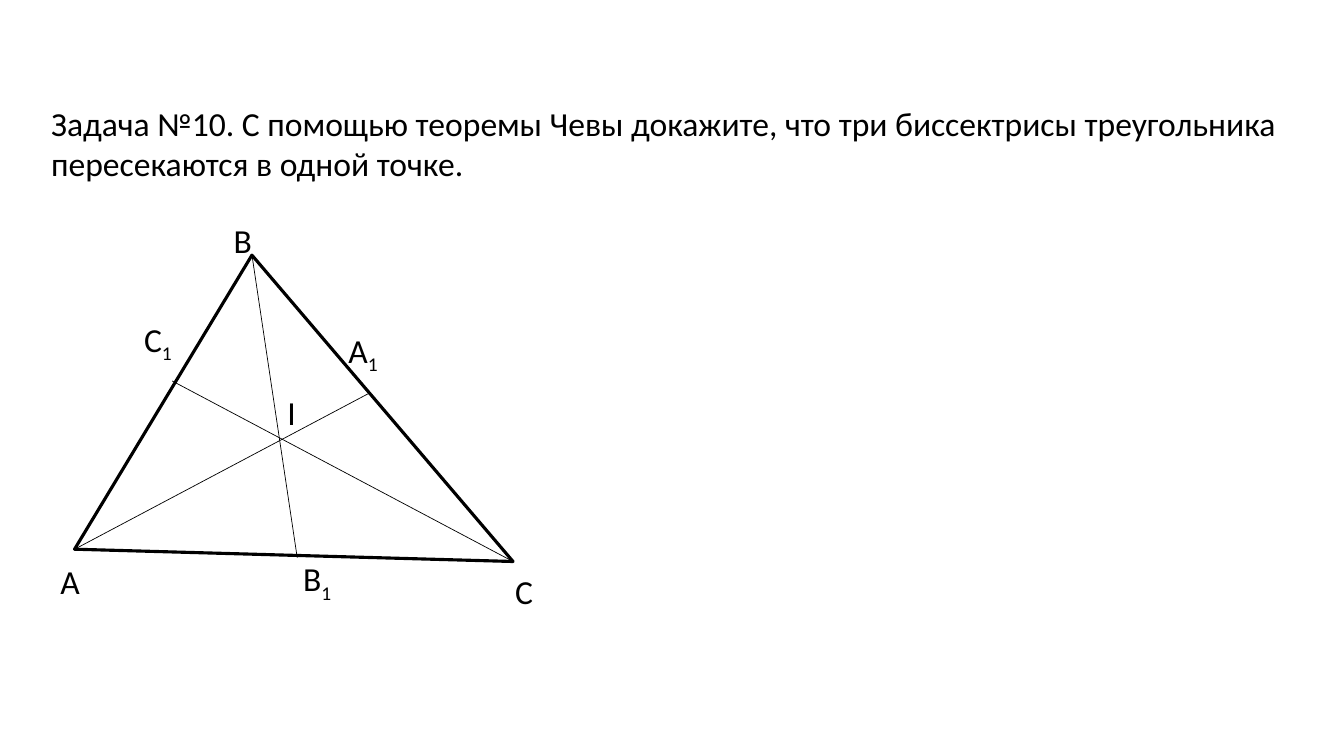
from pptx import Presentation
from pptx.dml.color import RGBColor
from pptx.enum.shapes import MSO_CONNECTOR as Connector
from pptx.enum.text import MSO_AUTO_SIZE as AutoSize
from pptx.oxml.ns import qn
from pptx.util import Cm, Pt
from lxml.etree import SubElement

BLACK = RGBColor(0, 0, 0)

VERTICES = {"А": (1.88, 13.84), "В": (6.35, 6.43), "С": (12.93, 14.15)}
BISECTORS = {"А": (9.3, 9.91), "В": (7.49, 14.05), "С": (4.34, 9.6)}
LABELS = [
    ("А", "", 1.27, 14.02, 1.02),
    ("В", "", 5.64, 5.41, 1.02),
    ("С", "", 12.73, 14.25, 1.02),
    ("C", "1", 3.38, 7.9, 1.65),
    ("A", "1", 8.53, 8.18, 1.45),
    ("B", "1", 7.39, 13.94, 1.63),
    ("I", "", 6.99, 9.75, 1.02),
]
PROBLEM = ("Задача №10. С помощью теоремы Чевы докажите, что три биссектрисы "
           "треугольника пересекаются в одной точке.")


class Sketch:
    text_format = {"name": "Calibri", "size": Pt(24)}

    def __init__(self, page):
        self.shapes = page.shapes

    def begin_group(self):
        self.shapes = self.shapes.add_group_shape().shapes

    def text(self, words, left, top, width, height=1.27, subscript=""):
        box = self.shapes.add_textbox(Cm(left), Cm(top), Cm(width), Cm(height))
        frame = box.text_frame
        frame.word_wrap = True
        frame.auto_size = AutoSize.SHAPE_TO_FIT_TEXT
        para = frame.paragraphs[0]
        self.span(para, words)
        if subscript:
            font = self.span(para, subscript).font
            font._element.set("baseline", "-25000")

    def span(self, para, words):
        span = para.add_run()
        span.text = words
        for name, value in self.text_format.items():
            setattr(span.font, name, value)
        span.font.color.rgb = BLACK
        return span

    def stroke(self, line, width):
        line.width = Pt(width)
        line.color.rgb = BLACK

    def polygon(self, points, width):
        start, *others = [(Cm(x), Cm(y)) for x, y in points]
        builder = self.shapes.build_freeform(*start)
        builder.add_line_segments(others, close=True)
        outline = builder.convert_to_shape()
        outline.shadow.inherit = False
        outline.fill.background()
        self.stroke(outline.line, width)

    def segment(self, start, end, width):
        ends = [Cm(value) for value in (*start, *end)]
        segment = self.shapes.add_connector(Connector.STRAIGHT, *ends)
        self.stroke(segment.line, width)
        SubElement(segment._element.spPr, qn("a:effectLst"))


def main():
    deck = Presentation()
    deck.slide_width, deck.slide_height = Cm(33.87), Cm(19.05)
    sketch = Sketch(deck.slides.add_slide(deck.slide_layouts[6]))
    sketch.text(PROBLEM, 1.04, 2.46, 31.93, 2.31)
    sketch.begin_group()
    sketch.polygon(VERTICES.values(), 2.25)
    for vertex, foot in BISECTORS.items():
        sketch.segment(VERTICES[vertex], foot, 0.5)
    for letter, subscript, left, top, width in LABELS:
        sketch.text(letter, left, top, width, subscript=subscript)
    deck.save("out.pptx")


if __name__ == "__main__":
    main()
